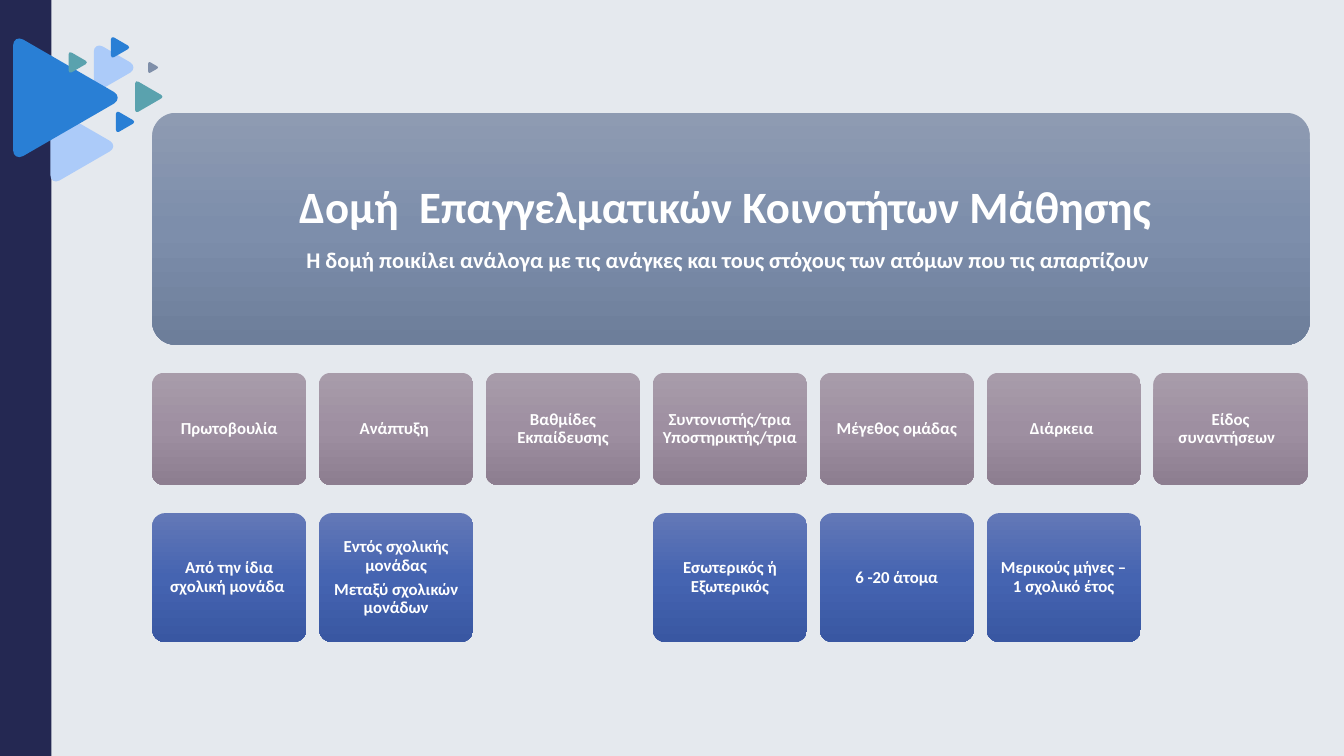
from dataclasses import dataclass
from math import sqrt

from lxml import etree
from pptx import Presentation
from pptx.dml.color import RGBColor
from pptx.enum.shapes import MSO_SHAPE
from pptx.enum.text import MSO_ANCHOR, MSO_AUTO_SIZE, PP_ALIGN
from pptx.oxml.ns import qn
from pptx.util import Inches, Pt

RECT = MSO_SHAPE.RECTANGLE
ROUND = MSO_SHAPE.ROUNDED_RECTANGLE
MIDDLE = MSO_ANCHOR.MIDDLE
CENTER = PP_ALIGN.CENTER
NO_FIT = MSO_AUTO_SIZE.NONE


@dataclass(frozen=True)
class Theme:
    font: str = "Calibri"
    back: str = "E5E9EE"
    navy: str = "242852"
    pale: str = "ACCBF9"
    blue: str = "297FD5"
    slate: str = "7F8FA9"
    teal: str = "5AA2AE"
    white: str = "FFFFFF"
    banner: tuple = ("8E9BB2", "7D8EAB", "6D7E9A")
    head: tuple = ("A89CAA", "9E8FA1", "8D7E90")
    detail: tuple = ("6378B7", "4564B1", "3957A2")
    title: int = 32
    sub: int = 16
    label: int = 12


THEME = Theme()

# Left edge, middle height, width to the sharp tip, corner cut, colour
ARROWS = [
    (0.5, 1.45, 0.68, 0.09, THEME.pale),
    (0.93, 0.67, 0.45, 0.09, THEME.pale),
    (1.15, 1.21, 0.2, 0.03, THEME.blue),
    (1.1, 0.47, 0.2, 0.03, THEME.blue),
    (1.47, 0.67, 0.11, 0.02, THEME.slate),
    (1.34, 0.96, 0.29, 0.03, THEME.teal),
    (0.13, 0.97, 1.1, 0.1, THEME.blue),
    (0.68, 0.62, 0.2, 0.03, THEME.teal),
]

# Heading and the paragraphs of the card under it
TOPICS = [
    ("Πρωτοβουλία", ["Από την ίδια σχολική μονάδα "]),
    ("Ανάπτυξη ", ["Εντός σχολικής μονάδας", "Μεταξύ σχολικών μονάδων"]),
    ("Βαθμίδες Εκπαίδευσης", []),
    ("Συντονιστής/τρια Υποστηρικτής/τρια", ["Εσωτερικός ή Εξωτερικός"]),
    ("Μέγεθος ομάδας", ["6 -20 άτομα"]),
    ("Διάρκεια ", ["Μερικούς μήνες – 1 σχολικό έτος"]),
    ("Είδος συναντήσεων  ", []),
]
BANNER = [
    "Δομή  Επαγγελματικών Κοινοτήτων Μάθησης ",
    "Η δομή ποικίλει ανάλογα με τις ανάγκες και τους στόχους των ατόμων που τις απαρτίζουν ",
]
LEFT, LAST = 1.51, 11.44
CARD = 1.53


def paint(shape, color):
    shape.shadow.inherit = False
    shape.line.fill.background()
    shape.fill.solid()
    shape.fill.fore_color.rgb = RGBColor.from_string(color)


def shade(shape, colors):
    """Fill from top to bottom through evenly spaced colours."""
    shape.shadow.inherit = False
    shape.line.fill.background()
    shape.fill.gradient()
    shape.fill.gradient_angle = 270
    stops = shape._element.spPr.find(".//" + qn("a:gsLst"))
    stops.clear()
    for i, color in enumerate(colors):
        pos = str(100000 * i // (len(colors) - 1))
        stop = etree.SubElement(stops, qn("a:gs"), pos=pos)
        etree.SubElement(stop, qn("a:srgbClr"), val=color)


def write(shape, lines, sizes, inset=0.05):
    frame = shape.text_frame
    frame.auto_size = NO_FIT
    frame.word_wrap = True
    frame.vertical_anchor = MIDDLE
    frame.margin_left = frame.margin_right = Inches(inset)
    frame.margin_top = frame.margin_bottom = Inches(inset)
    for i, (line, size) in enumerate(zip(lines, sizes)):
        para = frame.add_paragraph() if i else frame.paragraphs[0]
        para.alignment = CENTER
        para.line_spacing = 0.9
        para.space_before = Pt(0)
        # Space after is a share of the line height
        para.space_after = Pt(0)
        after = para._p.pPr.find(qn("a:spcAft"))
        after.clear()
        etree.SubElement(after, qn("a:spcPct"), val="35000")
        run = para.add_run()
        run.text = line
        run.font.name = THEME.font
        run.font.size = Pt(size)
        run.font.bold = True
        run.font.color.rgb = RGBColor.from_string(THEME.white)


def box(slide, kind, left, top, width, height):
    return slide.shapes.add_shape(
        kind, Inches(left), Inches(top), Inches(width), Inches(height))


def panel(slide, left, top, width, height, colors):
    shape = box(slide, ROUND, left, top, width, height)
    shape.adjustments[0] = 0.1
    shade(shape, colors)
    return shape


def blend(start, end, part):
    return tuple(s + (e - s) * part for s, e in zip(start, end))


def draw(trace, tag, *points):
    step = etree.SubElement(trace, qn(tag))
    for x, y in points:
        etree.SubElement(step, qn("a:pt"), x=str(Inches(x)), y=str(Inches(y)))


def arrow(slide, left, mid, width, cut, color):
    """Triangle with equal sides and round corners, pointing right."""
    # The curves reach 0.62 of the cut from the tip, 0.46 at the sides
    half = width / sqrt(3)
    wide, rise = width - 0.62 * cut, half - 0.46 * cut
    right, top, base = left + wide, mid - rise, mid + rise
    form = slide.shapes.build_freeform(Inches(left), Inches(top))
    form.add_line_segments([(Inches(x), Inches(y)) for x, y in (
        (right, top), (right, base), (left, base))])
    shape = form.convert_to_shape()

    # Outline inside that frame: a line to each corner, then a curve
    trace = shape._element.spPr.find(".//" + qn("a:path"))
    for step in list(trace):
        trace.remove(step)
    tips = [(width, rise), (0, rise + half), (0, rise - half)]
    part = cut / width
    for i, tip in enumerate(tips):
        prior, after = tips[i - 1], tips[(i + 1) % 3]
        draw(trace, "a:lnTo" if i else "a:moveTo", blend(tip, prior, part))
        draw(trace, "a:cubicBezTo", blend(tip, prior, part / 2),
             blend(tip, after, part / 2), blend(tip, after, part))
    etree.SubElement(trace, qn("a:close"))
    paint(shape, color)


def banner(slide):
    panel(slide, LEFT, 1.12, 11.48, 2.3, THEME.banner)
    title = slide.shapes.title
    title.left, title.top = Inches(1.57), Inches(1.19)
    title.width, title.height = Inches(11.35), Inches(2.16)
    write(title, BANNER, (THEME.title, THEME.sub), inset=0.13)
    # Bring the title in front of its panel
    slide.shapes._spTree.append(title._element)


def main():
    deck = Presentation()
    deck.slide_width, deck.slide_height = Inches(13.33), Inches(7.5)
    slide = deck.slides.add_slide(deck.slide_layouts[5])
    slide.background.fill.solid()
    slide.background.fill.fore_color.rgb = RGBColor.from_string(THEME.back)

    # Side strip and triangles
    paint(box(slide, RECT, 0, 0, 0.51, 7.5), THEME.navy)
    for item in ARROWS:
        arrow(slide, *item)

    banner(slide)

    # Topic columns
    pitch = (LAST - LEFT) / (len(TOPICS) - 1)
    for i, (head, lines) in enumerate(TOPICS):
        left = LEFT + i * pitch
        card = panel(slide, left, 3.7, CARD, 1.11, THEME.head)
        write(card, [head], [THEME.label])
        if lines:
            card = panel(slide, left, 5.09, CARD, 1.28, THEME.detail)
            write(card, lines, [THEME.label] * len(lines))

    deck.save("out.pptx")


if __name__ == "__main__":
    main()
